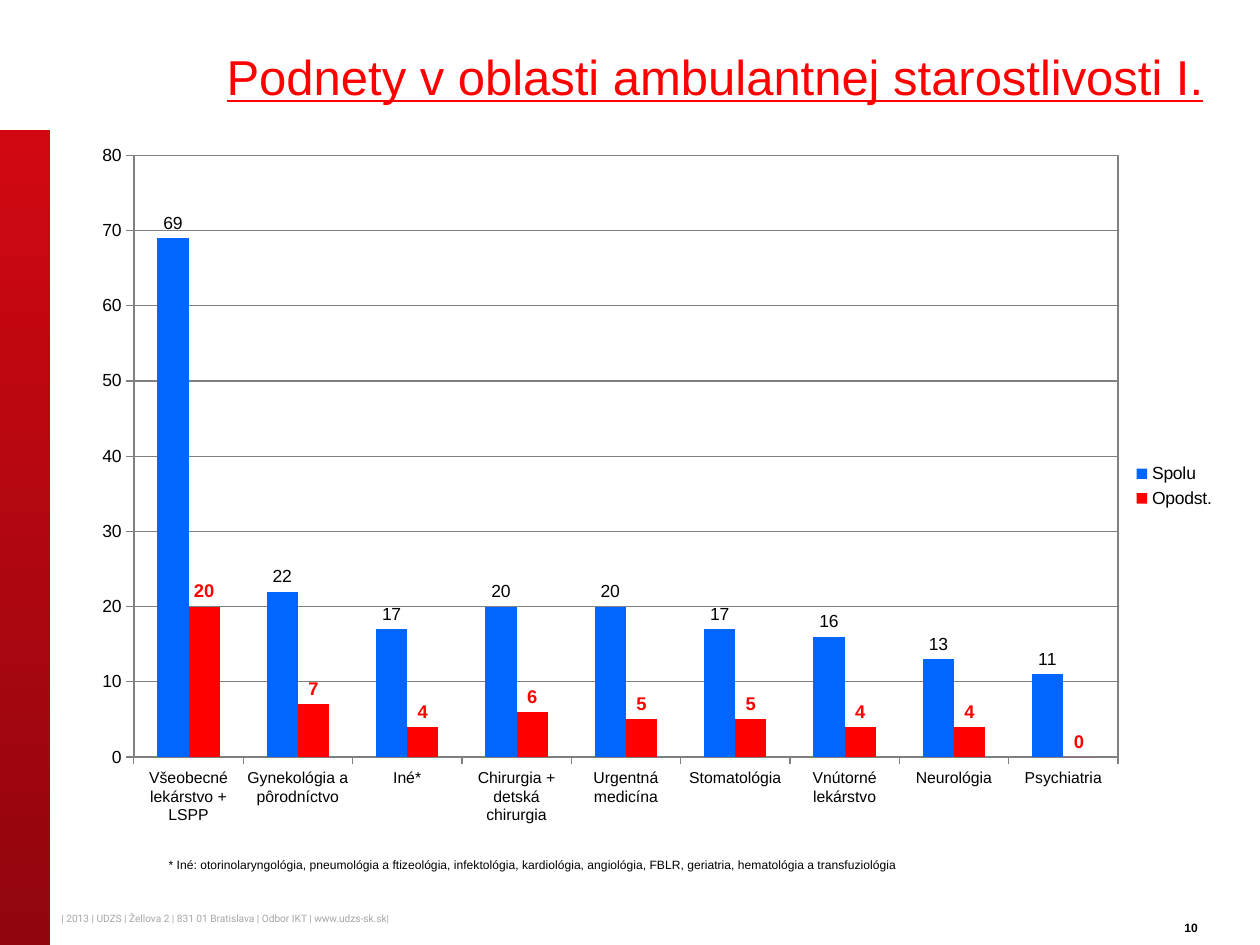
"""Build the slide on complaints in outpatient care."""
import lxml.etree
import pptx
import pptx.chart.data
import pptx.dml.color
import pptx.enum.chart
import pptx.enum.shapes
import pptx.enum.text
import pptx.oxml
import pptx.oxml.ns
import pptx.util

Cm = pptx.util.Cm
Pt = pptx.util.Pt
ALIGN = pptx.enum.text.PP_ALIGN
COLORS = {
    "black": "000000", "red": "FF0000", "blue": "0066FF", "footer": "A6A6A6",
    "grid": "808080", "band_top": "D10811", "band_bottom": "91050F",
}


def color(name):
    return pptx.dml.color.RGBColor.from_string(COLORS[name])


def add_text(page, text, left, top, width, height, size, name, align=ALIGN.LEFT,
             face="Arial", spacing=1.0, lowered=True):
    box = page.shapes.add_textbox(Cm(left), Cm(top), Cm(width), Cm(height))
    box.text_frame.word_wrap = True
    para = box.text_frame.paragraphs[0]
    para.text = text
    para.alignment = align
    para.line_spacing = spacing
    span = para.runs[0]
    span.font.size = Pt(size)
    span.font.name = face
    span.font.color.rgb = color(name)
    if lowered:
        span.font._element.set("baseline", "-25000")
    return span


deck = pptx.Presentation()
deck.slide_width = Cm(25.4)
deck.slide_height = Cm(19.05)
page = deck.slides.add_slide(deck.slide_layouts[6])

number = add_text(page, "10", 23.06, 18.14, 1.91, 0.76, 12, "black", ALIGN.CENTER)
number.font.bold = True
add_text(page, "| 2013 | UDZS | Žellova 2 | 831 01 Bratislava | Odbor IKT | www.udzs-sk.sk|",
         0.99, 18.03, 13.54, 0.97, 10, "footer", face="Roboto", spacing=0.9)

band = page.shapes.add_shape(pptx.enum.shapes.MSO_SHAPE.RECTANGLE,
                             Cm(0), Cm(2.62), Cm(1.01), Cm(16.43))
band.shadow.inherit = False
band.line.fill.background()
band.fill.gradient()
band.fill.gradient_angle = 270
for stop, name, position in zip(band.fill.gradient_stops, ("band_top", "band_bottom"), (0, 1)):
    stop.color.rgb = color(name)
    stop.position = position

title = add_text(page, "Podnety v oblasti ambulantnej starostlivosti I.",
                 4.32, 0.95, 20.6, 1.63, 28, "red", spacing=0.9, lowered=False)
title.font.underline = True
add_text(page, "* Iné: otorinolaryngológia, pneumológia a\u00a0ftizeológia, infektológia, kardiológia, "
         "angiológia, FBLR, geriatria, hematológia a\u00a0transfuziológia".replace("\u00a0", " "),
         3.15, 16.87, 22, 0.94, 12, "black")

data = pptx.chart.data.CategoryChartData()
data.categories = [
    "Všeobecné lekárstvo + LSPP", "Gynekológia a pôrodníctvo", "Iné*",
    "Chirurgia + detská chirurgia", "Urgentná medicína", "Stomatológia",
    "Vnútorné lekárstvo", "Neurológia", "Psychiatria",
]
data.add_series("Spolu", (69, 22, 17, 20, 20, 17, 16, 13, 11))
data.add_series("Opodst.", (20, 7, 4, 6, 5, 5, 4, 4, 0))
chart = page.shapes.add_chart(pptx.enum.chart.XL_CHART_TYPE.COLUMN_CLUSTERED,
                              Cm(1.85), Cm(2.74), Cm(22.91), Cm(14.12), data).chart
chart.has_title = False
chart.font.name = "Arial"
chart.font.size = Pt(10)
chart.font.color.rgb = color("black")
chart.has_legend = True
chart.legend.position = pptx.enum.chart.XL_LEGEND_POSITION.RIGHT
chart.legend.include_in_layout = False

values = chart.value_axis
values.minimum_scale = 0
values.maximum_scale = 80
values.major_unit = 10
values.has_major_gridlines = True
values.major_gridlines.format.line.color.rgb = color("grid")
chart.category_axis.tick_labels.font.size = Pt(9)
for axis in (values, chart.category_axis):
    axis.format.line.color.rgb = color("grid")
    axis.major_tick_mark = pptx.enum.chart.XL_TICK_MARK.OUTSIDE

plot = chart.plots[0]
plot.gap_width = 150
plot.overlap = 0
plot.vary_by_categories = False
styles = (("blue", "black", 10, False), ("red", "red", 10.5, True))
for series, (fill, label, size, bold) in zip(plot.series, styles):
    series.format.fill.solid()
    series.format.fill.fore_color.rgb = color(fill)
    series.invert_if_negative = False
    labels = series.data_labels
    labels.show_value = True
    labels.position = pptx.enum.chart.XL_LABEL_POSITION.OUTSIDE_END
    labels.font.name = "Arial"
    labels.font.size = Pt(size)
    labels.font.bold = bold
    labels.font.color.rgb = color(label)

area = chart._chartSpace.chart.plotArea
for old in area.findall(pptx.oxml.ns.qn("c:layout")):
    area.remove(old)
layout = lxml.etree.Element(pptx.oxml.ns.qn("c:layout"))
manual = lxml.etree.SubElement(layout, pptx.oxml.ns.qn("c:manualLayout"))
settings = (("layoutTarget", "inner"), ("xMode", "edge"), ("yMode", "edge"),
            ("x", "0.037"), ("y", "0.028"), ("w", "0.866"), ("h", "0.859"))
for tag, value in settings:
    lxml.etree.SubElement(manual, pptx.oxml.ns.qn("c:" + tag)).set("val", value)
area.insert(0, layout)
area.append(pptx.oxml.parse_xml(
    f'<c:spPr {pptx.oxml.ns.nsdecls("c", "a")}><a:noFill/><a:ln w="12700"><a:solidFill>'
    f'<a:srgbClr val="{COLORS["grid"]}"/></a:solidFill></a:ln></c:spPr>'))

deck.save("out.pptx")
